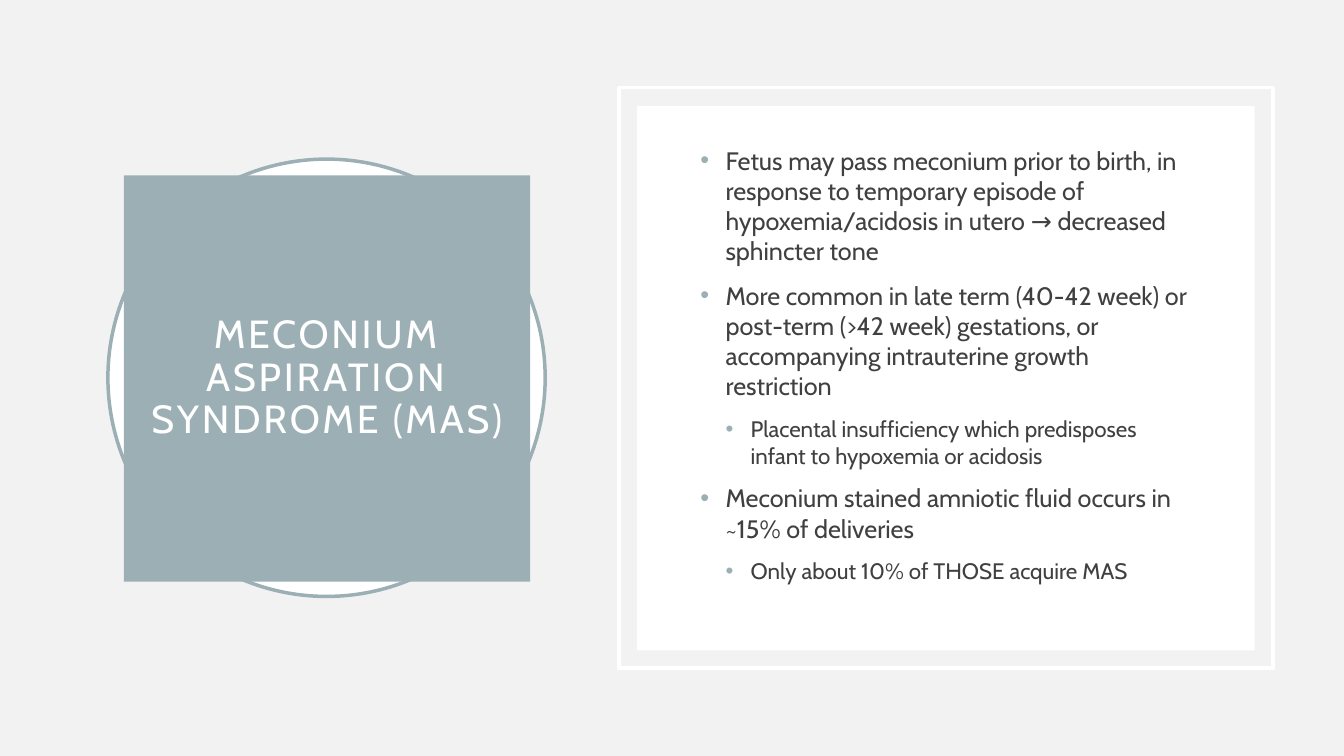
from lxml import etree
from pptx import Presentation
from pptx import util as u
from pptx.dml import color
from pptx.enum import shapes, text
from pptx.oxml import ns

WHITE, PALE, TEAL, DARK = "FFFFFF", "F2F2F2", "9BAFB5", "404040"
TITLE = "MECONIUM ASPIRATION SYNDROME (MAS)"
POINTS = [
    (0, "Fetus may pass meconium prior to birth, in response to temporary "
        "episode of hypoxemia/acidosis in utero → decreased sphincter tone"),
    (0, "More common in late term (40-42 week) or post-term (>42 week) "
        "gestations, or accompanying intrauterine growth restriction"),
    (1, "Placental insufficiency which predisposes infant to hypoxemia or acidosis"),
    (0, "Meconium stained amniotic fluid occurs in ~15% of deliveries"),
    (1, "Only about 10% of THOSE acquire MAS"),
]


def rgb(code):
    return color.RGBColor.from_string(code)


class Page:
    font = "Cabin"
    sizes = (18, 16)
    indent = 0.635

    def __init__(self, deck):
        self.slide = deck.slides.add_slide(deck.slide_layouts[6])
        fill = self.slide.background.fill
        fill.solid()
        fill.fore_color.rgb = rgb(PALE)

    def shape(self, kind, box, fill=None, line=None):
        item = self.slide.shapes.add_shape(kind, *map(u.Cm, box))
        item.shadow.inherit = False
        if fill:
            item.fill.solid()
            item.fill.fore_color.rgb = rgb(fill)
        else:
            item.fill.background()
        if line:
            item.line.color.rgb = rgb(line)
            item.line.width = u.Pt(2.5)
        else:
            item.line.fill.background()
        return item

    def style(self, para, size, tint):
        for run in para.runs:
            run.font.name = self.font
            run.font.size = u.Pt(size)
            run.font.color.rgb = rgb(tint)

    def title(self, item, words):
        frame = item.text_frame
        frame.text = words
        frame.word_wrap = True
        frame.vertical_anchor = text.MSO_ANCHOR.MIDDLE
        frame.margin_left = frame.margin_right = u.Cm(0.51)
        frame.margin_top = frame.margin_bottom = u.Cm(0.51)
        para = frame.paragraphs[0]
        para.alignment = text.PP_ALIGN.CENTER
        para.line_spacing = 0.9
        self.style(para, 28, WHITE)
        for run in para.runs:
            run.font._element.set("spc", "200")

    def bullet(self, para, level):
        props = para._p.get_or_add_pPr()
        props.set("marL", str(u.Cm(self.indent * (level + 1))))
        props.set("indent", str(u.Cm(-self.indent)))
        tint = etree.SubElement(props, ns.qn("a:buClr"))
        etree.SubElement(tint, ns.qn("a:srgbClr"), val=TEAL)
        etree.SubElement(props, ns.qn("a:buFont"), typeface="Arial")
        etree.SubElement(props, ns.qn("a:buChar"), char="•")

    def points(self, box, items):
        frame = self.slide.shapes.add_textbox(*map(u.Cm, box)).text_frame
        frame.word_wrap = True
        for i, (level, words) in enumerate(items):
            para = frame.add_paragraph() if i else frame.paragraphs[0]
            para.text = words
            para.level = level
            self.bullet(para, level)
            if i:
                para.space_before = u.Pt(10)
            self.style(para, self.sizes[level], DARK)


def main():
    deck = Presentation()
    deck.slide_width, deck.slide_height = u.Cm(33.87), u.Cm(19.05)
    page = Page(deck)
    oval, rect = shapes.MSO_SHAPE.OVAL, shapes.MSO_SHAPE.RECTANGLE

    page.shape(oval, (2.72, 4.01, 11.02, 11.02), WHITE, TEAL)
    square = page.shape(rect, (3.12, 4.42, 10.24, 10.24), TEAL)
    page.title(square, TITLE)

    page.shape(rect, (15.6, 2.21, 16.48, 14.63), line=WHITE)
    page.shape(rect, (16.05, 2.67, 15.57, 13.72), WHITE)
    page.points((17.4, 3.53, 12.93, 11.4), POINTS)
    deck.save("out.pptx")


if __name__ == "__main__":
    main()
